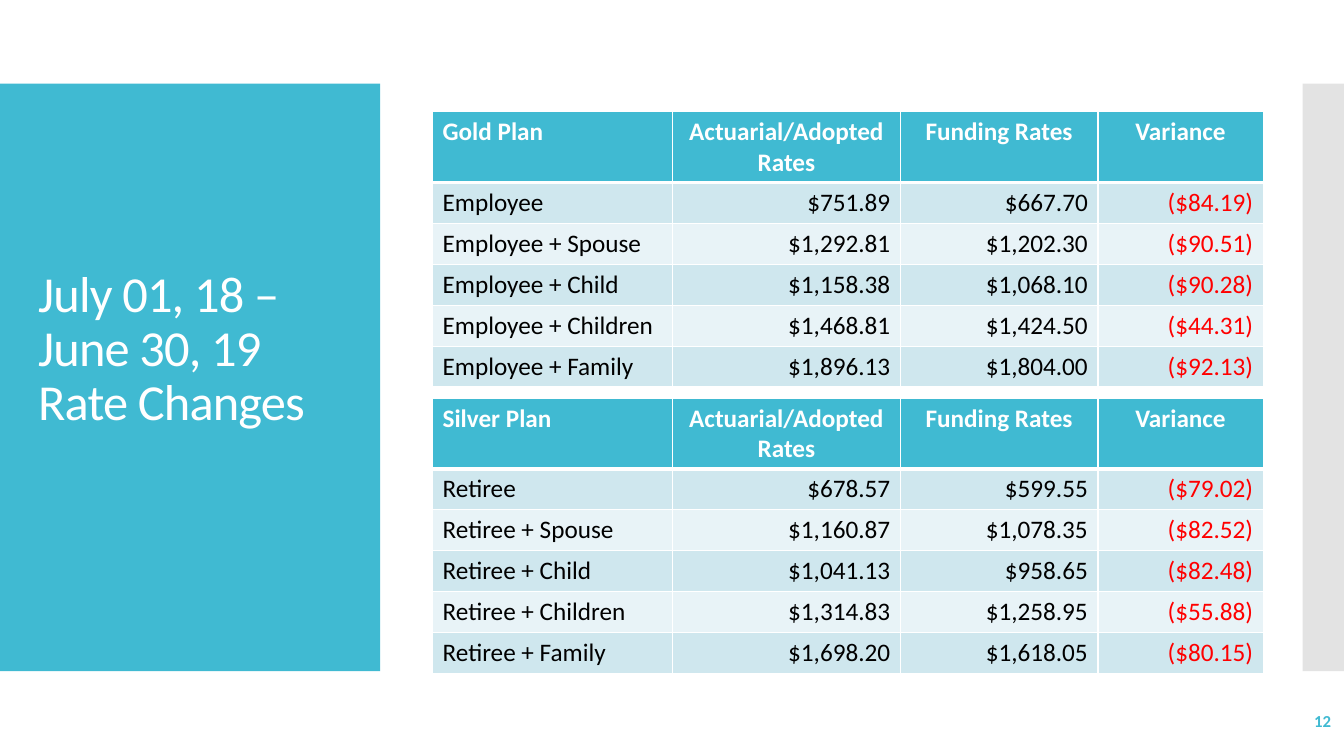
from lxml import etree
from pptx import Presentation
from pptx.dml.color import RGBColor
from pptx.enum import shapes, text
from pptx.oxml import ns
from pptx.util import Inches, Pt

COLORS = {
    "teal": "40BAD2", "gray": "C8C8C8", "white": "FFFFFF", "black": "000000",
    "red": "FF0000", "band_dark": "CFE7EE", "band_light": "E8F3F7",
}
FONT = "Calibri"
LEFT, CENTER, RIGHT = text.PP_ALIGN.LEFT, text.PP_ALIGN.CENTER, text.PP_ALIGN.RIGHT


def style_text(paragraph, size, color, align=LEFT, bold=False):
    paragraph.alignment = align
    for run in paragraph.runs:
        run.font.name = FONT
        run.font.size = Pt(size)
        run.font.bold = bold
        run.font.color.rgb = RGBColor.from_string(COLORS[color])


def add_border(cell, side, width):
    properties = cell._tc.get_or_add_tcPr()
    line = etree.SubElement(properties, ns.qn(f"a:ln{side}"), w=str(Pt(width)))
    fill = etree.SubElement(line, ns.qn("a:solidFill"))
    etree.SubElement(fill, ns.qn("a:srgbClr"), val=COLORS["white"])


presentation = Presentation()
presentation.slide_width = Inches(13.33)
presentation.slide_height = Inches(7.5)
slide = presentation.slides.add_slide(presentation.slide_layouts[6])

# Side panels
for left, width, color in [(0, 3.77, "teal"), (12.92, 0.41, "gray")]:
    panel = slide.shapes.add_shape(
        shapes.MSO_SHAPE.RECTANGLE, Inches(left), Inches(0.83), Inches(width), Inches(5.83))
    panel.shadow.inherit = False
    panel.line.fill.background()
    panel.fill.solid()
    panel.fill.fore_color.rgb = RGBColor.from_string(COLORS[color])
    if color == "gray":
        panel_color = panel._element.spPr.find(".//" + ns.qn("a:srgbClr"))
        etree.SubElement(panel_color, ns.qn("a:alpha"), val="50000")

# Title, raised by a deeper bottom margin
title = slide.shapes.add_textbox(Inches(0.28), Inches(1.23), Inches(3.22), Inches(5.03))
title_frame = title.text_frame
title_frame.word_wrap = True
title_frame.vertical_anchor = text.MSO_ANCHOR.MIDDLE
title_frame.margin_bottom = Inches(0.59)
title_frame.text = "July 01, 18 – June 30, 19\vRate Changes"
title_frame.paragraphs[0].line_spacing = 0.9
style_text(title_frame.paragraphs[0], 36, "white")
for run in title_frame.paragraphs[0].runs:
    run.font._element.set("spc", "-60")

# Rate tables
HEADINGS = ["Actuarial/Adopted Rates", "Funding Rates", "Variance"]
COLUMN_WIDTHS = [2.38, 2.26, 1.96, 1.64]
TABLE_HEIGHT, HEADER_HEIGHT = 2.73, 0.7
PLANS = [
    ("Gold Plan", 1.11, [
        ("Employee", "$751.89", "$667.70", "($84.19)"),
        ("Employee + Spouse", "$1,292.81", "$1,202.30", "($90.51)"),
        ("Employee + Child", "$1,158.38", "$1,068.10", "($90.28)"),
        ("Employee + Children", "$1,468.81", "$1,424.50", "($44.31)"),
        ("Employee + Family", "$1,896.13", "$1,804.00", "($92.13)"),
    ]),
    ("Silver Plan", 3.95, [
        ("Retiree", "$678.57", "$599.55", "($79.02)"),
        ("Retiree + Spouse", "$1,160.87", "$1,078.35", "($82.52)"),
        ("Retiree + Child", "$1,041.13", "$958.65", "($82.48)"),
        ("Retiree + Children", "$1,314.83", "$1,258.95", "($55.88)"),
        ("Retiree + Family", "$1,698.20", "$1,618.05", "($80.15)"),
    ]),
]
for plan, top, rates in PLANS:
    rows = [(plan, *HEADINGS), *rates]
    table = slide.shapes.add_table(
        len(rows), len(COLUMN_WIDTHS), Inches(4.29), Inches(top),
        Inches(sum(COLUMN_WIDTHS)), Inches(TABLE_HEIGHT)).table
    for column, width in zip(table.columns, COLUMN_WIDTHS):
        column.width = Inches(width)
    for row_index, values in enumerate(rows):
        header = row_index == 0
        row_height = HEADER_HEIGHT if header else (TABLE_HEIGHT - HEADER_HEIGHT) / len(rates)
        table.rows[row_index].height = Inches(row_height)
        band = "teal" if header else "band_dark" if row_index % 2 else "band_light"
        for column_index, value in enumerate(values):
            cell = table.cell(row_index, column_index)
            for side in "LRTB":
                thick = (side == "B" and header) or (side == "T" and row_index == 1)
                add_border(cell, side, 3 if thick else 1)
            cell.fill.solid()
            cell.fill.fore_color.rgb = RGBColor.from_string(COLORS[band])
            cell.text_frame.text = value
            align = LEFT if column_index == 0 else CENTER if header else RIGHT
            color = "white" if header else "red" if column_index == 3 else "black"
            style_text(cell.text_frame.paragraphs[0], 18, color, align, header)

# Slide number
number = slide.shapes.add_textbox(Inches(11.63), Inches(6.95), Inches(1.67), Inches(0.4))
number.text_frame.word_wrap = True
number.text_frame.vertical_anchor = text.MSO_ANCHOR.MIDDLE
number.text_frame.text = "12"
style_text(number.text_frame.paragraphs[0], 12, "teal", RIGHT, True)

presentation.save("out.pptx")
